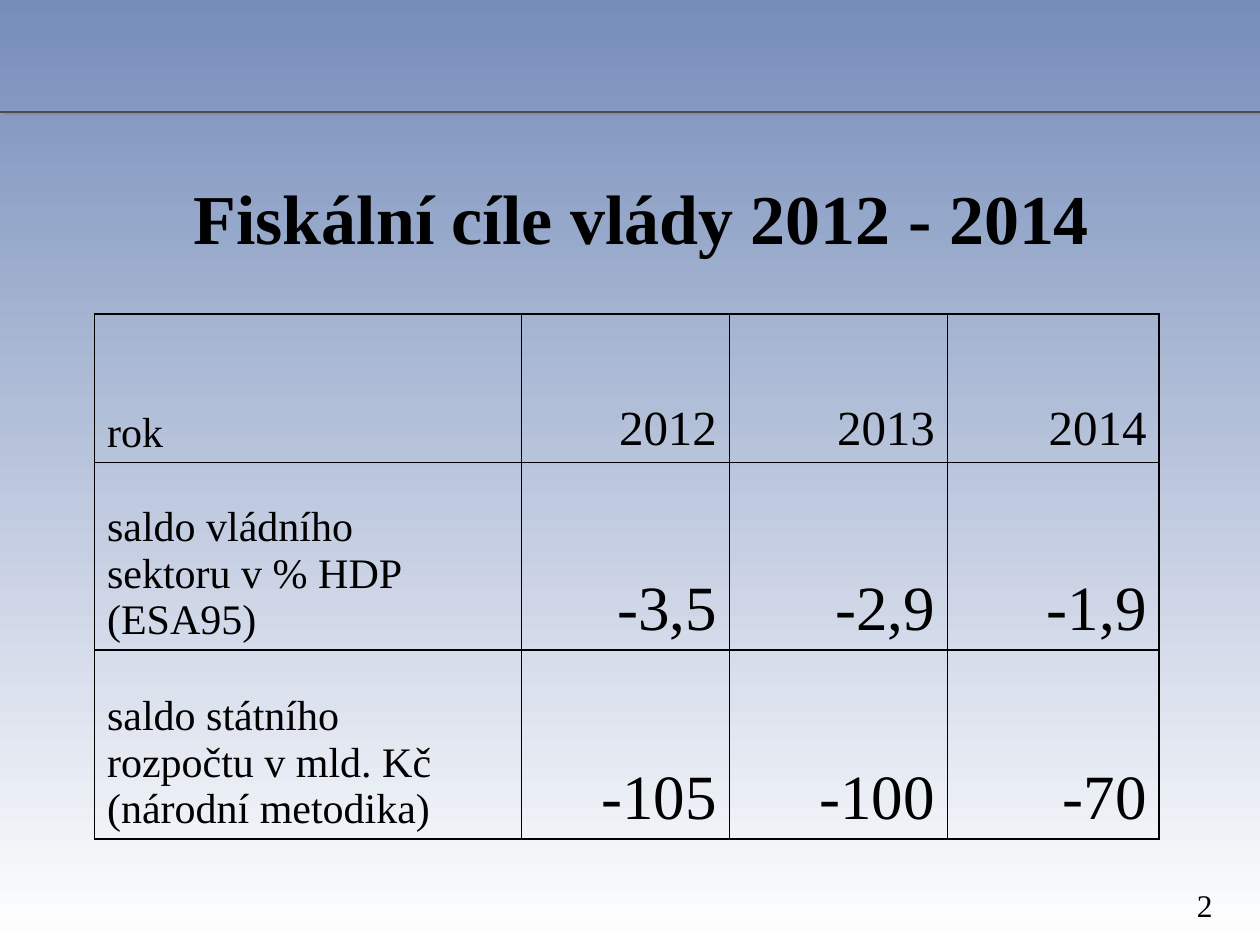
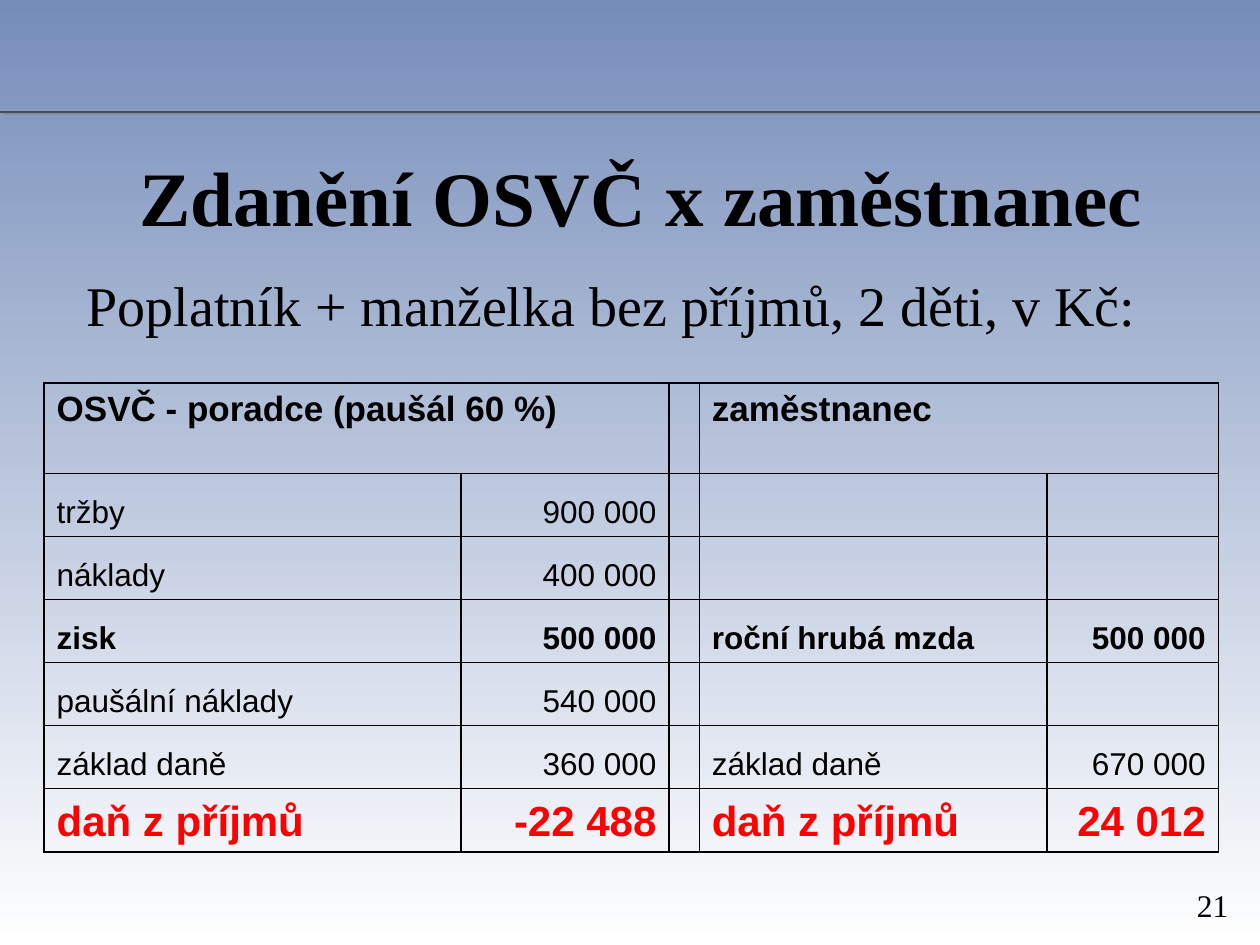
from dataclasses import dataclass

from lxml import etree
from pptx import Presentation
from pptx.dml.color import RGBColor
from pptx.enum.shapes import MSO_CONNECTOR
from pptx.enum.text import MSO_ANCHOR, PP_ALIGN
from pptx.oxml.ns import qn
from pptx.util import Inches, Pt

LEFT, MID, RIGHT, JUST = PP_ALIGN.LEFT, PP_ALIGN.CENTER, PP_ALIGN.RIGHT, PP_ALIGN.JUSTIFY
TOP, HALF, BASE = MSO_ANCHOR.TOP, MSO_ANCHOR.MIDDLE, MSO_ANCHOR.BOTTOM
STRAIGHT = MSO_CONNECTOR.STRAIGHT

WIDE, HIGH = Inches(10), Inches(7.5)
COLS, ROWS = 100, 75
SERIF, SANS = "Times New Roman", "Arial"
BLACK, RED, GREY, SHADE = "000000", "FF0000", "4D4D4D", "808080"
SKY, WHITE = "768DBA", "FFFFFF"


@dataclass(frozen=True)
class Box:
    x: float
    y: float
    w: float
    h: float


@dataclass(frozen=True)
class Style:
    size: float
    font: str = SERIF
    bold: bool = False
    hue: str = BLACK


@dataclass(frozen=True)
class Row:
    high: float
    texts: tuple[str, ...]
    label: Style
    value: Style
    anchor: MSO_ANCHOR = BASE


@dataclass(frozen=True)
class Grid:
    x: float
    y: float
    wide: tuple[float, ...]
    rows: tuple[Row, ...]
    sums: tuple[int, ...]
    spans: tuple[tuple[int, int], ...] = ()


PAGE = Box(90.2, 69.8, 9.8, 4)
LEAD = Box(5.9, 21, 91.4, 6.5)
RULE = 8.9

NOTE, YEAR, GOAL = Style(24), Style(28), Style(36)
HEAD, PLAIN = Style(20, SANS, True), Style(18, SANS)
BOLD, TAX = Style(18, SANS, True), Style(24, SANS, True, RED)

GOALS = Grid(7.5, 24.9, (33.9, 16.5, 17.3, 16.8), (
    Row(11.8, ("rok", "2012", "2013", "2014"), NOTE, YEAR),
    Row(14.9, ("saldo vládního\nsektoru v % HDP\n(ESA95)", "-3,5", "-2,9", "-1,9"), NOTE, GOAL),
    Row(15, ("saldo státního\nrozpočtu v mld. Kč\n(národní metodika)", "-105", "-100", "-70"), NOTE, GOAL),
), (1, 2, 3))


def line(style: Style, *texts: str) -> Row:
    return Row(5, texts, style, style)


TAXES = Grid(3.5, 30.4, (33.1, 16.5, 2.4, 27.6, 13.6), (
    Row(7.2, ("OSVČ - poradce (paušál 60 %)", "", "", "zaměstnanec", ""), HEAD, HEAD, TOP),
    line(PLAIN, "tržby", "900 000", "", "", ""),
    line(PLAIN, "náklady", "400 000", "", "", ""),
    line(BOLD, "zisk", "500 000", "", "roční hrubá mzda", "500 000"),
    line(PLAIN, "paušální náklady", "540 000", "", "", ""),
    line(PLAIN, "základ daně", "360 000", "", "základ daně", "670 000"),
    line(TAX, "daň z příjmů", "-22 488", "", "daň z příjmů", "24 012"),
), (1, 4), ((0, 1), (3, 4)))


def rgb(code: str) -> RGBColor:
    return RGBColor.from_string(code)


def across(cols: float) -> int:
    return round(WIDE * cols / COLS)


def down(rows: float) -> int:
    return round(HIGH * rows / ROWS)


def place(box: Box) -> tuple[int, int, int, int]:
    return across(box.x), down(box.y), across(box.w), down(box.h)


def write(frame, text: str, style: Style, align: PP_ALIGN) -> None:
    for i, part in enumerate(text.split("\n")):
        para = frame.add_paragraph() if i else frame.paragraphs[0]
        para.alignment = align
        run = para.add_run()
        run.text = part
        font = run.font
        font.name, font.size, font.bold = style.font, Pt(style.size), style.bold
        font.color.rgb = rgb(style.hue)


def add_text(slide, box: Box, text: str, style: Style, indent: float = 0) -> None:
    frame = slide.shapes.add_textbox(*place(box)).text_frame
    frame.word_wrap = True
    frame.paragraphs[0]._p.get_or_add_pPr().set("marL", str(across(indent)))
    write(frame, text, style, JUST)


def add_rule(slide) -> None:
    rule = slide.shapes.add_connector(STRAIGHT, 0, down(RULE), WIDE, down(RULE))
    rule.line.color.rgb, rule.line.width = rgb(GREY), Pt(1)
    fx = etree.SubElement(rule._element.spPr, qn("a:effectLst"))
    cast = etree.SubElement(fx, qn("a:outerShdw"), dist=str(Pt(2.2)), dir=str(27 * 60000))
    tint = etree.SubElement(cast, qn("a:srgbClr"), val=SHADE)
    etree.SubElement(tint, qn("a:alpha"), val="50000")


def frame_cell(cell) -> None:
    props = cell._tc.get_or_add_tcPr()
    for side in ("lnL", "lnR", "lnT", "lnB"):
        edge = etree.SubElement(props, qn(f"a:{side}"), w=str(Pt(1)))
        fill = etree.SubElement(edge, qn("a:solidFill"))
        etree.SubElement(fill, qn("a:srgbClr"), val=BLACK)
    cell.fill.background()


def add_grid(slide, grid: Grid) -> None:
    box = Box(grid.x, grid.y, sum(grid.wide), sum(row.high for row in grid.rows))
    table = slide.shapes.add_table(len(grid.rows), len(grid.wide), *place(box)).table
    table.first_row = table.horz_banding = False
    for col, wide in zip(table.columns, grid.wide):
        col.width = across(wide)
    for start, end in grid.spans:
        table.cell(0, start).merge(table.cell(0, end))
    for r, row in enumerate(grid.rows):
        table.rows[r].height = down(row.high)
        for c, text in enumerate(row.texts):
            cell = table.cell(r, c)
            frame_cell(cell)
            cell.vertical_anchor = row.anchor
            if text:
                total = c in grid.sums
                write(cell.text_frame, text, row.value if total else row.label,
                      RIGHT if total else LEFT)


def add_slide(deck, title: str, size: float, y: float, page: str):
    slide = deck.slides.add_slide(deck.slide_layouts[5])
    add_rule(slide)
    add_text(slide, PAGE, page, Style(18), 3.8)
    head = slide.shapes.title
    head.left, head.top, head.width, head.height = place(Box(5.9, y, 90, 11.3))
    head.text_frame.word_wrap = True
    head.text_frame.vertical_anchor = HALF
    write(head.text_frame, title, Style(size, bold=True), MID)
    return slide


def main() -> None:
    deck = Presentation()
    deck.slide_width, deck.slide_height = WIDE, HIGH
    fill = deck.slide_master.background.fill
    fill.gradient()
    fill.gradient_angle = 270
    for stop, hue in zip(fill.gradient_stops, (SKY, WHITE)):
        stop.color.rgb = rgb(hue)

    goals = add_slide(deck, "Fiskální cíle vlády 2012 - 2014", 40, 11.5, "2")
    add_grid(goals, GOALS)

    taxes = add_slide(deck, "Zdanění OSVČ x zaměstnanec", 44, 9.9, "21")
    add_text(taxes, LEAD, "Poplatník + manželka bez příjmů, 2 děti, v Kč:", Style(32))
    add_grid(taxes, TAXES)
    deck.save("out.pptx")


if __name__ == "__main__":
    main()
